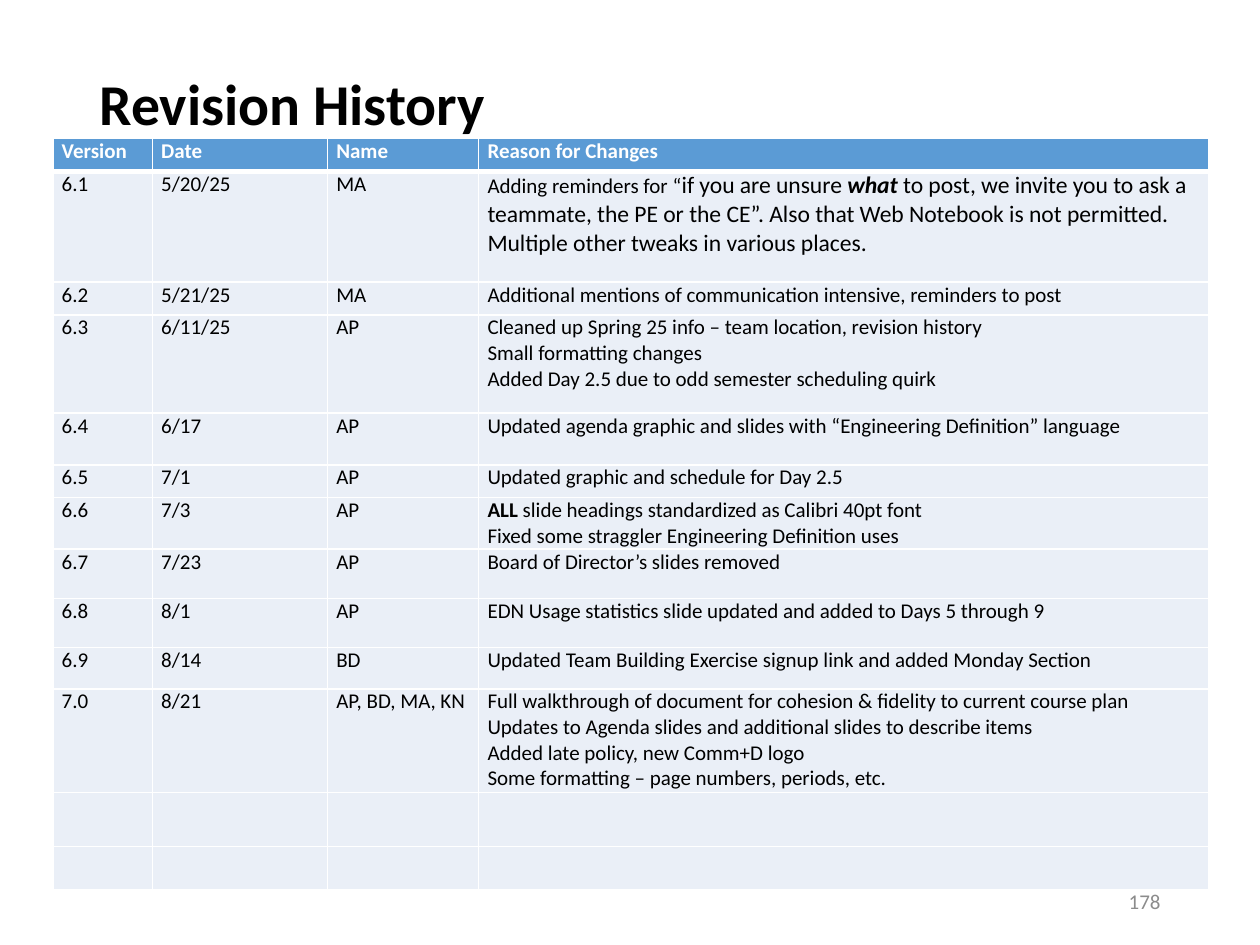
from dataclasses import dataclass

from lxml.etree import SubElement
from pptx import Presentation
from pptx.dml.color import RGBColor
from pptx.enum.text import MSO_ANCHOR as Anchor, PP_ALIGN as Align
from pptx.oxml.ns import qn
from pptx.util import Inches, Pt


@dataclass(frozen=True)
class Theme:
    font: str = "Calibri"
    title_size: float = 33
    body_size: float = 12
    large_size: float = 13.5
    text: str = "000000"
    header_text: str = "FFFFFF"
    header_fill: str = "5B9BD5"
    body_fill: str = "EAEFF7"
    border: str = "FFFFFF"
    page_number: str = "8C8C8C"


@dataclass(frozen=True)
class Span:
    text: str
    size: float = Theme.body_size
    bold: bool = False
    italic: bool = False


Line = tuple[Span, ...]


@dataclass(frozen=True)
class Revision:
    height: float
    version: str = ""
    date: str = ""
    name: str = ""
    reasons: tuple[Line, ...] = ()


THEME = Theme()
COLUMN_WIDTHS = (0.79, 1.39, 1.2, 5.79)
HEADINGS = ("Version", "Date", "Name", "Reason for Changes")
HEADER_HEIGHT = 0.26


def plain(*texts: str) -> tuple[Line, ...]:
    """One unformatted line for each text."""
    return tuple((Span(text),) for text in texts)


REVISIONS = (
    Revision(0.88, "6.1", "5/20/25", "MA", ((
        Span("Adding reminders for “"),
        Span("if you are unsure ", THEME.large_size),
        Span("what", THEME.large_size, bold=True, italic=True),
        Span(" to post, we invite you to ask a teammate, the PE or the CE”. "
             "Also that Web Notebook is not permitted. "
             "Multiple other tweaks in various places.", THEME.large_size),
    ),)),
    Revision(0.26, "6.2", "5/21/25", "MA", plain(
        "Additional mentions of communication intensive, reminders to post")),
    Revision(0.78, "6.3", "6/11/25", "AP", plain(
        "Cleaned up Spring 25 info – team location, revision history",
        "Small formatting changes",
        "Added Day 2.5 due to odd semester scheduling quirk")),
    Revision(0.41, "6.4", "6/17", "AP", plain(
        "Updated agenda graphic and slides with “Engineering Definition” language")),
    Revision(0.26, "6.5", "7/1", "AP", plain("Updated graphic and schedule for Day 2.5")),
    Revision(0.41, "6.6", "7/3", "AP", (
        (Span("ALL", bold=True),
         Span(" slide headings standardized as Calibri 40pt font")),
        *plain("Fixed some straggler Engineering Definition uses"))),
    Revision(0.39, "6.7", "7/23", "AP", plain("Board of Director’s slides removed")),
    Revision(0.39, "6.8", "8/1", "AP", plain(
        "EDN Usage statistics slide updated and added to Days 5 through 9")),
    Revision(0.33, "6.9", "8/14", "BD", plain(
        "Updated Team Building Exercise signup link and added Monday Section")),
    Revision(0.82, "7.0", "8/21", "AP, BD, MA, KN", plain(
        "Full walkthrough of document for cohesion & fidelity to current course plan",
        "Updates to Agenda slides and additional slides to describe items",
        "Added late policy, new Comm+D logo",
        "Some formatting – page numbers, periods, etc.")),
    Revision(0.43),
    Revision(0.34),
)


def format_run(run, color: str, size: float, bold: bool = False, italic: bool = False) -> None:
    run.font.name = THEME.font
    run.font.size = Pt(size)
    run.font.bold = bold
    run.font.italic = italic
    run.font.color.rgb = RGBColor.from_string(color)


def add_label(slide, left: float, top: float, width: float, height: float, text: str,
              color: str, size: float, bold: bool = False, align: Align = Align.LEFT):
    """Add a vertically centred one-line text box and return its text frame."""
    shape = slide.shapes.add_textbox(Inches(left), Inches(top), Inches(width), Inches(height))
    text_frame = shape.text_frame
    text_frame.word_wrap = True
    text_frame.vertical_anchor = Anchor.MIDDLE
    text_frame.text = text
    paragraph = text_frame.paragraphs[0]
    paragraph.alignment = align
    format_run(paragraph.runs[0], color, size, bold)
    return text_frame


def set_borders(cell, top: float = 1, bottom: float = 1) -> None:
    properties = cell._tc.get_or_add_tcPr()
    for side, width in (("L", 1), ("R", 1), ("T", top), ("B", bottom)):
        line = SubElement(properties, qn(f"a:ln{side}"), w=str(Pt(width)))
        fill = SubElement(line, qn("a:solidFill"))
        SubElement(fill, qn("a:srgbClr"), val=THEME.border)


def fill_cell(cell, lines: tuple[Line, ...], color: str, fill: str) -> None:
    cell.margin_left = cell.margin_right = Inches(0.07)
    cell.margin_top = cell.margin_bottom = 0
    cell.fill.solid()
    cell.fill.fore_color.rgb = RGBColor.from_string(fill)
    for index, line in enumerate(lines):
        text_frame = cell.text_frame
        paragraph = text_frame.add_paragraph() if index else text_frame.paragraphs[0]
        for span in line:
            run = paragraph.add_run()
            run.text = span.text
            format_run(run, color, span.size, span.bold, span.italic)


def add_revision_table(slide, left: float, top: float) -> None:
    heights = (HEADER_HEIGHT, *(revision.height for revision in REVISIONS))
    table = slide.shapes.add_table(
        len(heights), len(COLUMN_WIDTHS), Inches(left), Inches(top),
        Inches(sum(COLUMN_WIDTHS)), Inches(sum(heights))).table
    table.horz_banding = False
    for column, width in zip(table.columns, COLUMN_WIDTHS):
        column.width = Inches(width)
    for row, height in zip(table.rows, heights):
        row.height = Inches(height)

    for index, heading in enumerate(HEADINGS):
        cell = table.cell(0, index)
        set_borders(cell, bottom=3)
        fill_cell(cell, ((Span(heading, bold=True),),), THEME.header_text, THEME.header_fill)
    for row_index, revision in enumerate(REVISIONS, start=1):
        details = (revision.version, revision.date, revision.name)
        contents = [plain(text) if text else () for text in details]
        for index, lines in enumerate((*contents, revision.reasons)):
            cell = table.cell(row_index, index)
            set_borders(cell, top=3 if row_index == 1 else 1)
            fill_cell(cell, lines, THEME.text, THEME.body_fill)


def main() -> None:
    presentation = Presentation()
    presentation.slide_width, presentation.slide_height = Inches(10), Inches(7.5)
    slide = presentation.slides.add_slide(presentation.slide_layouts[6])
    title = add_label(slide, 0.69, 0.4, 8.62, 1.45, "Revision History",
                      THEME.text, THEME.title_size, bold=True)
    title.margin_bottom = Inches(0.6)
    title.paragraphs[0].line_spacing = 0.9
    add_revision_table(slide, 0.42, 1.1)
    add_label(slide, 7.06, 6.95, 2.25, 0.4, "178",
              THEME.page_number, THEME.body_size, align=Align.RIGHT)
    presentation.save("out.pptx")


if __name__ == "__main__":
    main()
